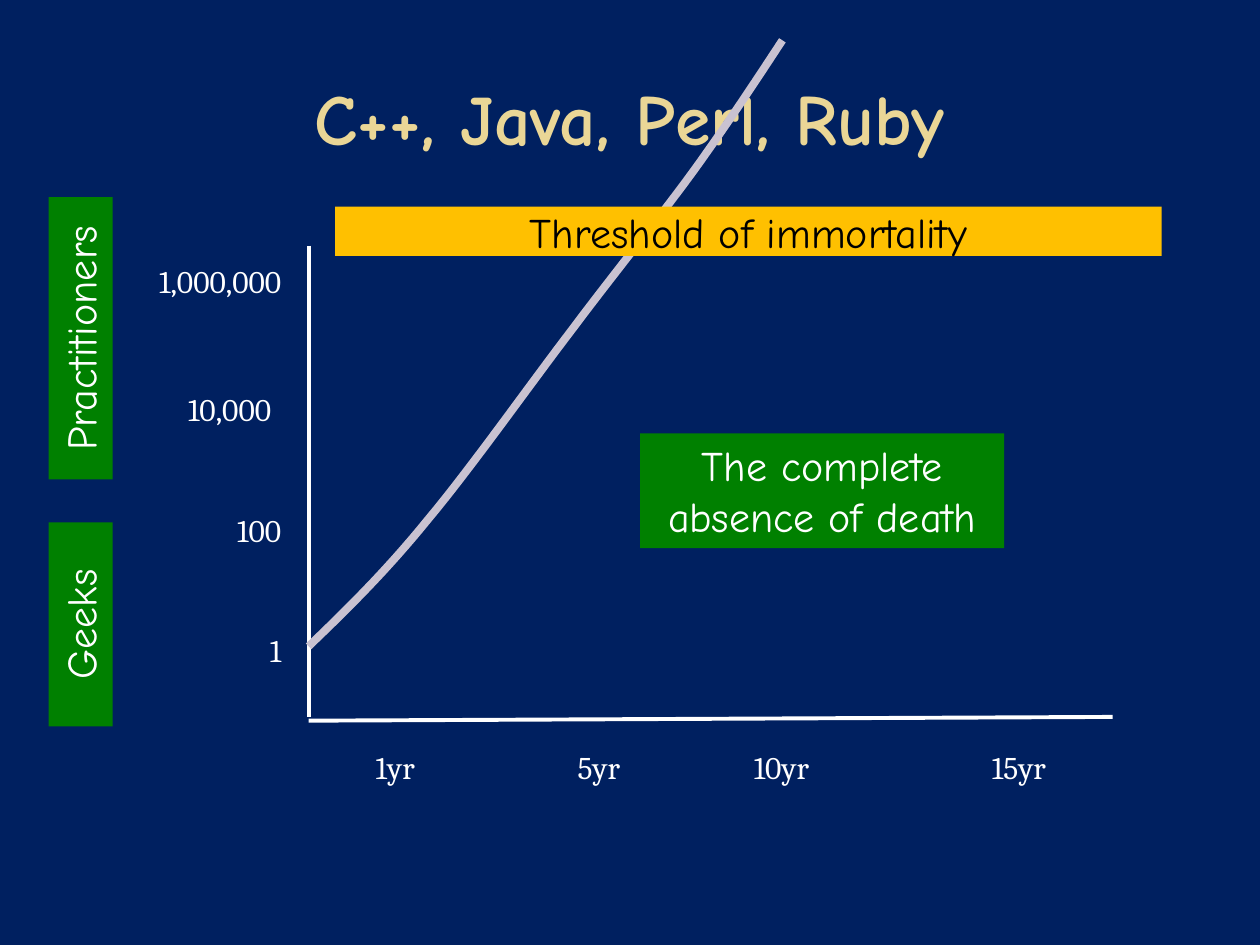
"""Build the slide on the growth of C++, Java, Perl and Ruby."""
from dataclasses import dataclass

from lxml import etree
from pptx import Presentation
from pptx.dml.color import RGBColor
from pptx.enum.shapes import MSO_CONNECTOR, MSO_SHAPE
from pptx.enum.text import MSO_ANCHOR, PP_ALIGN
from pptx.oxml.ns import qn
from pptx.util import Inches, Pt

STRAIGHT, RECT = MSO_CONNECTOR.STRAIGHT, MSO_SHAPE.RECTANGLE
TOP, MIDDLE = MSO_ANCHOR.TOP, MSO_ANCHOR.MIDDLE
CENTER, RIGHT = PP_ALIGN.CENTER, PP_ALIGN.RIGHT


@dataclass(frozen=True)
class Theme:
    bg: str = "002060"
    title: str = "EAD696"
    text: str = "FFFFFF"
    dark: str = "000000"
    curve: str = "C9C2D1"
    green: str = "008000"
    amber: str = "FFC000"
    display: str = "Comic Neue"
    body: str = "Cambria"
    title_size: float = 41
    box_size: float = 24
    tick_size: float = 18
    axis_width: float = 2.25
    curve_width: float = 4.5


T = Theme()
WIDTH, HEIGHT = Inches(10), Inches(7.5)
COLS, ROWS = 100, 75

TITLE = "C++, Java, Perl, Ruby"
TITLE_AT = (5, 3, 90, 12.5)
X_TICKS = [("1yr", 33.9), ("5yr", 50.2), ("10yr", 65.2), ("15yr", 84)]
Y_TICKS = [("1,000,000", 23.3, 20.3), ("10,000", 22.5, 30.5),
           ("100", 23.3, 40.1), ("1", 23.3, 49.6)]
X_TICK_TOP, TICK_WIDTH, TICK_HEIGHT = 58.9, 20, 4
AXES = [((24.5, 19.5), (24.5, 56.9)), ((88.3, 56.9), (24.5, 57.2))]
CURVE_START = (24.5, 51.3)
CURVE = [((27.5, 48.4), (30.5, 45.5), (34, 41.2)),
         ((37.5, 37), (42, 30.6), (45.6, 25.9)),
         ((49.2, 21.1), (52.9, 16.6), (55.6, 12.8)),
         ((58.3, 9), (60.2, 6.1), (62.1, 3.2))]
CURVE_STEPS = 16
BOXES = [
    ("The complete absence of death", (50.8, 34.4, 28.9, 9.1), 0, T.green, T.text, TOP),
    ("Geeks", (-1.7, 47, 16.2, 5.1), 270, T.green, T.text, TOP),
    ("Practitioners", (-4.8, 24.3, 22.4, 5.1), 270, T.green, T.text, TOP),
    ("Threshold of immortality", (26.6, 16.4, 65.6, 3.9), 0, T.amber, T.dark, MIDDLE),
]


def place(*cells):
    sizes = (WIDTH / COLS, HEIGHT / ROWS)
    return [round(cell * sizes[i % 2]) for i, cell in enumerate(cells)]


def write(sp, text, *, size, font, color=T.text, bold=False, align=CENTER, anchor=TOP):
    tf = sp.text_frame
    tf.word_wrap = True
    tf.vertical_anchor = anchor
    p = tf.paragraphs[0]
    p.alignment = align
    r = p.add_run()
    r.text = text
    r.font.size, r.font.name, r.font.bold = Pt(size), font, bold
    r.font.color.rgb = RGBColor.from_string(color)


def add_text(slide, text, at, **fmt):
    write(slide.shapes.add_textbox(*place(*at)), text, **fmt)


def add_tick(slide, text, right, top):
    add_text(slide, text, (right - TICK_WIDTH, top, TICK_WIDTH, TICK_HEIGHT),
             size=T.tick_size, font=T.body, align=RIGHT)


def style_line(sp, color, width):
    sp.line.color.rgb = RGBColor.from_string(color)
    sp.line.width = Pt(width)


def add_axis(slide, start, end):
    line = slide.shapes.add_connector(STRAIGHT, *place(*start, *end))
    style_line(line, T.text, T.axis_width)
    etree.SubElement(line._element.spPr, qn("a:effectLst"))


def bezier(points, t):
    weights = ((1 - t) ** 3, 3 * t * (1 - t) ** 2, 3 * t ** 2 * (1 - t), t ** 3)
    return place(*(sum(w * v for w, v in zip(weights, axis)) for axis in zip(*points)))


def add_curve(slide):
    points, start = [], CURVE_START
    for segment in CURVE:
        points += [bezier((start, *segment), i / CURVE_STEPS)
                   for i in range(1, CURVE_STEPS + 1)]
        start = segment[-1]
    builder = slide.shapes.build_freeform(*place(*CURVE_START))
    builder.add_line_segments(points, close=False)
    sp = builder.convert_to_shape()
    sp.shadow.inherit = False
    sp.fill.background()
    style_line(sp, T.curve, T.curve_width)


def add_box(slide, text, at, rotation, fill, color, anchor):
    sp = slide.shapes.add_shape(RECT, *place(*at))
    sp.rotation = rotation
    sp.shadow.inherit = False
    sp.fill.solid()
    sp.fill.fore_color.rgb = RGBColor.from_string(fill)
    sp.line.fill.background()
    write(sp, text, size=T.box_size, font=T.display, color=color, anchor=anchor)


def main():
    prs = Presentation()
    prs.slide_width, prs.slide_height = WIDTH, HEIGHT
    slide = prs.slides.add_slide(prs.slide_layouts[6])
    bg = slide.background.fill
    bg.solid()
    bg.fore_color.rgb = RGBColor.from_string(T.bg)

    add_text(slide, TITLE, TITLE_AT, size=T.title_size, font=T.display,
             color=T.title, bold=True, anchor=MIDDLE)
    for text, right in X_TICKS:
        add_tick(slide, text, right, X_TICK_TOP)
    for tick in Y_TICKS:
        add_tick(slide, *tick)
    for axis in AXES:
        add_axis(slide, *axis)
    add_curve(slide)
    for box in BOXES:
        add_box(slide, *box)
    prs.save("out.pptx")


if __name__ == "__main__":
    main()
